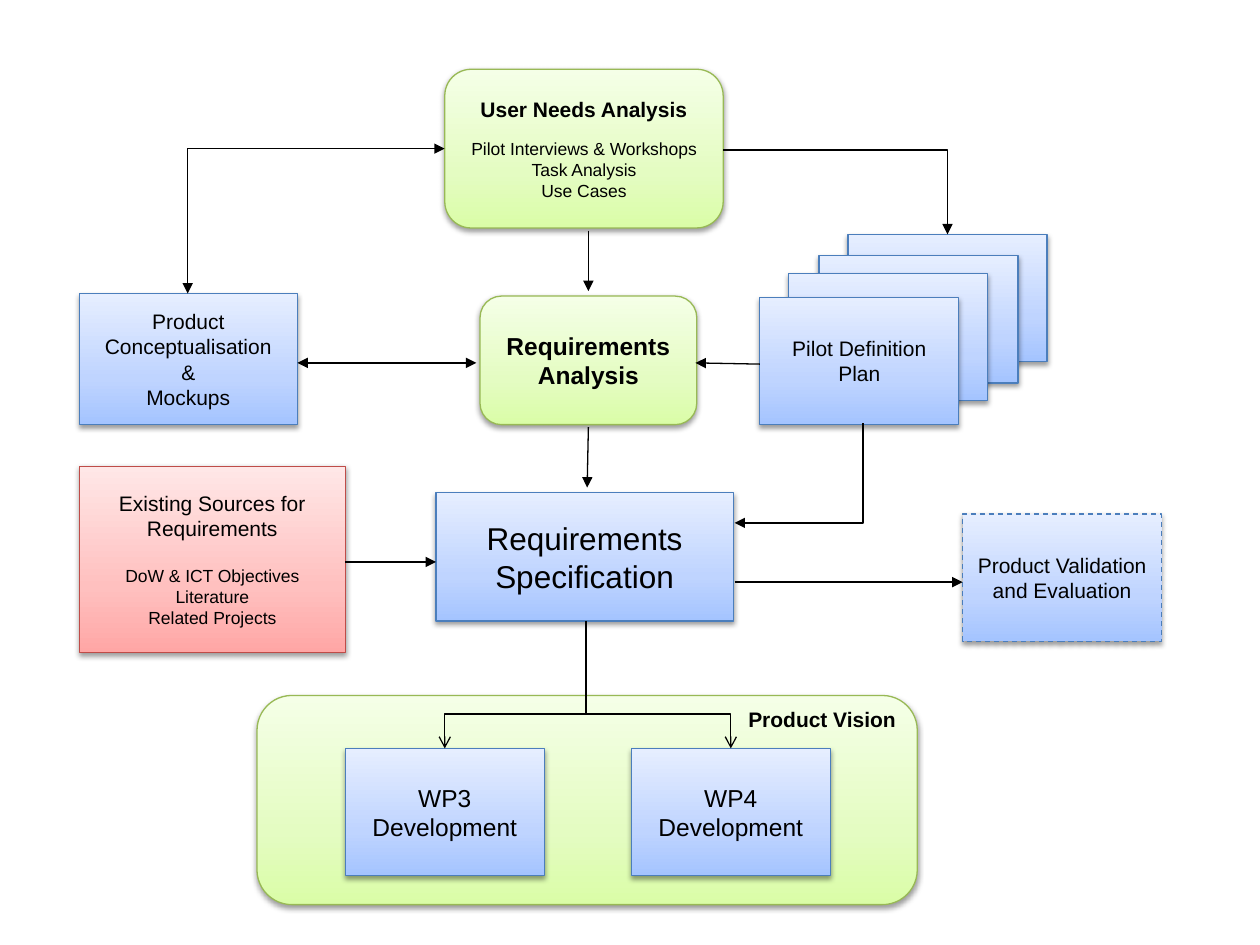
from lxml import etree
from pptx import Presentation
from pptx.dml.color import RGBColor
from pptx.enum import dml, shapes, text
from pptx.oxml.ns import qn
from pptx.util import Inches, Pt

COLORS = {
    "blue": ("A4C4FF", "BFD4FF", "E6EEFF", "4B7EBC"),
    "green": ("DAFDA7", "E4FCC2", "F5FFE7", "98B955"),
    "red": ("FFA6A5", "FFC0BF", "FFE7E7", "BF4C48"),
    "ink": "000000",
}
FONT = "Arial"
RECT, ROUND = shapes.MSO_SHAPE.RECTANGLE, shapes.MSO_SHAPE.ROUNDED_RECTANGLE
W, H = 1.58, 1.01

STACK = [(6.73, 1.86), (6.5, 2.03), (6.26, 2.17)]
BOXES = [
    ("blue", RECT, (3.46, 3.91, 2.36, 1.02), [("Requirements", 18), ("Specification", 18)], {}),
    *[("blue", RECT, (x, y, W, H), [], {}) for x, y in STACK],
    ("blue", RECT, (6.03, 2.36, W, H), [("Pilot Definition Plan", 12)], {}),
    ("green", ROUND, (2.04, 5.52, 5.24, 1.66), [], {}),
    ("green", ROUND, (3.53, 0.55, 2.21, 1.26),
     [("User Needs Analysis", 12), ("Pilot Interviews & Workshops", 10),
      ("Task Analysis", 10), ("Use Cases", 10)], {"bold": 1, "gap": 9}),
    ("red", RECT, (0.63, 3.7, 2.11, 1.48),
     [("Existing Sources for Requirements", 12), ("DoW & ICT Objectives", 10),
      ("Literature", 10), ("Related Projects", 10)], {"gap": 14}),
    ("blue", RECT, (2.74, 5.94, W, H), [("WP3 Development", 14)], {}),
    ("blue", RECT, (5.01, 5.94, W, H), [("WP4 Development", 14)], {}),
    ("blue", RECT, (0.63, 2.33, 1.73, 1.04),
     [("Product Conceptualisation", 12), ("&", 12), ("Mockups", 12)], {}),
    ("green", ROUND, (3.81, 2.35, 1.72, 1.02),
     [("Requirements", 14), ("Analysis", 14)], {"bold": 2}),
    ("blue", RECT, (7.64, 4.08, W, H), [("Product Validation and Evaluation", 12)], {}),
]
DASHED = "Product Validation and Evaluation"
VISION = ((5.74, 5.48, 1.57, 0.46), [("Product Vision", 12)])

ARROWS = [
    ((4.67, 1.83), (4.67, 2.31), False),
    ((4.67, 3.39), (4.66, 3.87), False),
    ((5.83, 4.62), (7.64, 4.62), False),
    ((2.36, 2.88), (3.78, 2.88), True),
    ((2.74, 4.46), (3.46, 4.46), False),
    ((6.03, 2.89), (5.52, 2.88), False),
]
ELBOWS = [
    ((5.74, 1.19), (7.52, 1.86), "bentConnector2", 0, "", {"tail": "triangle"}),
    ((6.85, 3.36), (5.83, 4.15), "bentConnector2", 90, "", {"tail": "triangle"}),
    ((1.49, 2.33), (3.53, 1.18), "bentConnector2", 90, "HV",
     {"head": "triangle", "tail": "triangle"}),
    ((4.65, 4.93), (3.53, 5.94), "bentConnector3", 90, "", {"tail": "arrow"}),
    ((4.65, 4.93), (5.8, 5.94), "bentConnector3", 270, "H", {"tail": "arrow"}),
]
BEND = 73000


def sub(parent, tag, **attrs):
    return etree.SubElement(parent, qn("a:" + tag), {k: str(v) for k, v in attrs.items()})


def write(sp, lines, bold=0, gap=0):
    tf = sp.text_frame
    tf.word_wrap = True
    tf.vertical_anchor = text.MSO_ANCHOR.MIDDLE
    for i, (words, size) in enumerate(lines):
        p = tf.paragraphs[0] if i == 0 else tf.add_paragraph()
        p.alignment = text.PP_ALIGN.CENTER
        p.space_before = Pt(gap if i == 1 else 0)
        r = p.add_run()
        r.text = words
        r.font.name, r.font.size, r.font.bold = FONT, Pt(size), i < bold
        r.font.color.rgb = RGBColor.from_string(COLORS["ink"])


def add_box(s, color, kind, at, lines, style):
    sp = s.shapes.add_shape(kind, *map(Inches, at))
    *stops, edge = COLORS[color]
    sp.fill.gradient()
    grad = sp._element.spPr.find(qn("a:gradFill"))
    for child in list(grad):
        grad.remove(child)
    stop_list = sub(grad, "gsLst")
    for pos, stop in zip((0, 35000, 100000), stops):
        sub(sub(stop_list, "gs", pos=pos), "srgbClr", val=stop)
    sub(grad, "lin", ang=270 * 60000, scaled=0)
    sp.line.color.rgb = RGBColor.from_string(edge)
    sp.line.width = Pt(0.75)
    if lines and lines[0][0] == DASHED:
        sp.line.dash_style = dml.MSO_LINE.DASH
    sp.shadow.inherit = False
    effects = sp._element.spPr.find(qn("a:effectLst"))
    shadow = sub(effects, "outerShdw", blurRad=Pt(3.1), dist=Pt(1.6),
                 dir=90 * 60000, rotWithShape=0)
    sub(sub(shadow, "srgbClr", val=COLORS["ink"]), "alpha", val=38000)
    write(sp, lines, **style)


def add_line(s, start, end, kind=shapes.MSO_CONNECTOR.STRAIGHT, head=None, tail=None):
    c = s.shapes.add_connector(kind, *map(Inches, start + end))
    c.line.color.rgb = RGBColor.from_string(COLORS["ink"])
    c.line.width = Pt(0.75)
    ln = c.line._get_or_add_ln()
    for tag, arrow in (("headEnd", head), ("tailEnd", tail)):
        if arrow:
            sub(ln, tag, type=arrow)
    sub(c._element.spPr, "effectLst")
    return c


def add_elbow(s, start, end, preset, turn, flips, ends):
    (x1, y1), (x2, y2) = start, end
    w, h = abs(x2 - x1), abs(y2 - y1)
    if turn:
        w, h = h, w
    left, top = (x1 + x2 - w) / 2, (y1 + y2 - h) / 2
    c = add_line(s, (left, top), (left + w, top + h), shapes.MSO_CONNECTOR.ELBOW, **ends)
    xfrm = c._element.spPr.find(qn("a:xfrm"))
    xfrm.set("rot", str(turn * 60000))
    for axis in flips:
        xfrm.set("flip" + axis, "1")
    geom = c._element.spPr.find(qn("a:prstGeom"))
    geom.set("prst", preset)
    if preset == "bentConnector3":
        sub(geom.find(qn("a:avLst")), "gd", name="adj1", fmla=f"val {BEND}")


def main():
    prs = Presentation()
    prs.slide_width, prs.slide_height = Inches(10), Inches(7.5)
    s = prs.slides.add_slide(prs.slide_layouts[6])
    for box in BOXES:
        add_box(s, *box)
    at, lines = VISION
    write(s.shapes.add_textbox(*map(Inches, at)), lines, bold=1)
    for start, end, both in ARROWS:
        add_line(s, start, end, head="triangle" if both else None, tail="triangle")
    for elbow in ELBOWS:
        add_elbow(s, *elbow)
    prs.save("out.pptx")


if __name__ == "__main__":
    main()
